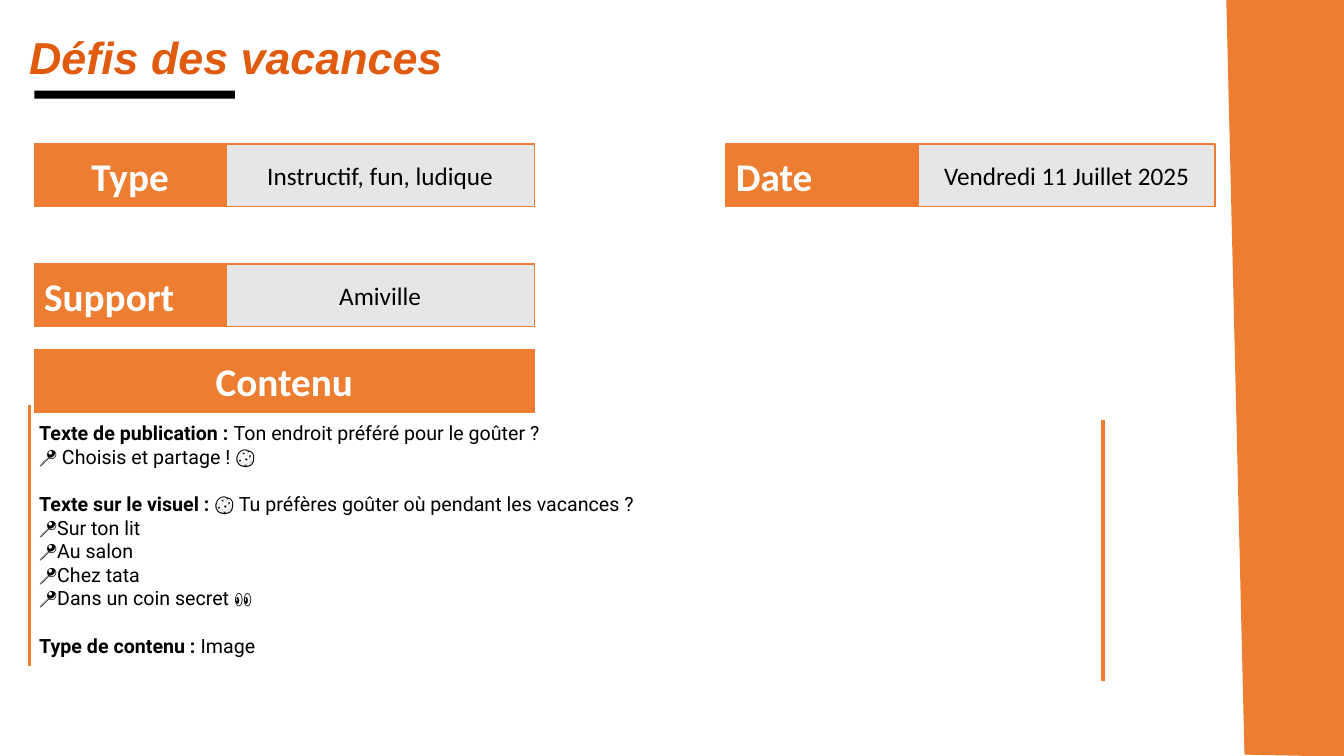
from dataclasses import dataclass

from lxml.etree import SubElement
from pptx import Presentation
from pptx.dml.color import RGBColor as Rgb
from pptx.enum.shapes import MSO_CONNECTOR as Connector, MSO_SHAPE as Preset
from pptx.enum.text import MSO_ANCHOR as Anchor, MSO_AUTO_SIZE as AutoSize, PP_ALIGN as Align
from pptx.oxml.ns import qn
from pptx.util import Emu, Pt

PX = 9144


@dataclass(frozen=True)
class Theme:
    orange: str = "ED7D31"
    title: str = "E15B0F"
    grey: str = "E7E6E6"
    black: str = "000000"
    white: str = "FFFFFF"
    title_font: str = "Arial"
    field_font: str = "Calibri"
    body_font: str = "Roboto"
    title_size: int = 32
    label_size: int = 28
    value_size: int = 18
    body_size: int = 14
    border: float = 1
    rule: float = 2.25
    section_gap: int = 17


@dataclass(frozen=True)
class Box:
    left: int
    top: int
    width: int
    height: int

    def emu(self) -> list[Emu]:
        return [Emu(n * PX) for n in (self.left, self.top, self.width, self.height)]


@dataclass(frozen=True)
class Field:
    label: str
    left: int
    top: int
    label_width: int
    value: str = ""
    value_width: int = 0
    align: Align = Align.LEFT


@dataclass(frozen=True)
class Line:
    text: str
    heading: str = ""
    gap: int = 0


THEME = Theme()
FIELD_HEIGHT = 62
RULE_HEIGHT = 259

FIELDS = [
    Field("Type", 34, 143, 190, "Instructif, fun, ludique", 306, Align.CENTER),
    Field("Date", 720, 143, 191, "Vendredi 11 Juillet 2025", 294),
    Field("Support", 34, 262, 190, "Amiville", 306),
    Field("Contenu", 34, 347, 496, align=Align.CENTER),
]
RULES = [(29, 402), (1094, 417)]
PUBLICATION = [
    Line("Ton endroit préféré pour le goûter ?", "Texte de publication : "),
    Line("📍 Choisis et partage ! 🍪"),
    Line("🍪 Tu préfères goûter où pendant les vacances ?", "Texte sur le visuel : ", THEME.section_gap),
    Line("📍Sur ton lit"),
    Line("📍Au salon"),
    Line("📍Chez tata"),
    Line("📍Dans un coin secret 👀"),
    Line(" Image", "Type de contenu :", THEME.section_gap),
]


def add_text(paragraph, text: str, *, font: str, size: int, color: str = THEME.black,
             bold: bool = False, italic: bool = False, align: Align = Align.LEFT) -> None:
    paragraph.alignment = align
    run = paragraph.add_run()
    run.text = text
    run.font.name = font
    run.font.size = Pt(size)
    run.font.bold = bold
    run.font.italic = italic
    run.font.color.rgb = Rgb.from_string(color)


def paint(shape, fill: str, border: str = "") -> None:
    shape.shadow.inherit = False
    shape.fill.solid()
    shape.fill.fore_color.rgb = Rgb.from_string(fill)
    if border:
        shape.line.color.rgb = Rgb.from_string(border)
        shape.line.width = Pt(THEME.border)
    else:
        shape.line.fill.background()


def add_band(slide) -> None:
    outline = slide.shapes.build_freeform(1217, 0, scale=PX)
    outline.add_line_segments([(1333, 0), (1334, 750), (1235, 748)], close=True)
    paint(outline.convert_to_shape(), THEME.orange, THEME.orange)


def add_rectangle(slide, box: Box, fill: str, border: str = ""):
    rectangle = slide.shapes.add_shape(Preset.RECTANGLE, *box.emu())
    paint(rectangle, fill, border)
    rectangle.text_frame.word_wrap = True
    rectangle.text_frame.vertical_anchor = Anchor.MIDDLE
    return rectangle.text_frame.paragraphs[0]


def add_field(slide, field: Field) -> None:
    label_box = Box(field.left, field.top, field.label_width, FIELD_HEIGHT)
    label = add_rectangle(slide, label_box, THEME.orange, THEME.orange)
    add_text(label, field.label, font=THEME.field_font, size=THEME.label_size,
             color=THEME.white, bold=True, align=field.align)
    if field.value:
        value_box = Box(field.left + field.label_width, field.top, field.value_width, FIELD_HEIGHT)
        value = add_rectangle(slide, value_box, THEME.grey, THEME.orange)
        add_text(value, field.value, font=THEME.field_font, size=THEME.value_size, align=Align.CENTER)


def add_rule(slide, x: int, top: int) -> None:
    ends = [Emu(n * PX) for n in (x, top, x, top + RULE_HEIGHT)]
    rule = slide.shapes.add_connector(Connector.STRAIGHT, *ends)
    rule.line.color.rgb = Rgb.from_string(THEME.orange)
    rule.line.width = Pt(THEME.rule)
    SubElement(rule._element.spPr, qn("a:effectLst"))


def add_frame(slide, box: Box):
    frame = slide.shapes.add_textbox(*box.emu()).text_frame
    frame.word_wrap = True
    return frame


def add_publication(slide, box: Box, lines: list[Line]) -> None:
    frame = add_frame(slide, box)
    frame.auto_size = AutoSize.SHAPE_TO_FIT_TEXT
    for index, line in enumerate(lines):
        paragraph = frame.add_paragraph() if index else frame.paragraphs[0]
        paragraph.space_before = Pt(line.gap)
        if line.heading:
            add_text(paragraph, line.heading, font=THEME.body_font, size=THEME.body_size, bold=True)
        add_text(paragraph, line.text, font=THEME.body_font, size=THEME.body_size)


def main() -> None:
    deck = Presentation()
    deck.slide_width, deck.slide_height = Emu(1333 * PX), Emu(750 * PX)
    slide = deck.slides.add_slide(deck.slide_layouts[6])

    add_band(slide)
    add_rectangle(slide, Box(34, 90, 199, 8), THEME.black)
    for field in FIELDS:
        add_field(slide, field)
    for x, top in RULES:
        add_rule(slide, x, top)
    add_publication(slide, Box(29, 413, 1082, 246), PUBLICATION)

    title = add_frame(slide, Box(19, 25, 1103, 52)).paragraphs[0]
    add_text(title, "Défis des vacances", font=THEME.title_font, size=THEME.title_size,
             color=THEME.title, bold=True, italic=True, align=Align.JUSTIFY)

    deck.save("out.pptx")


if __name__ == "__main__":
    main()
